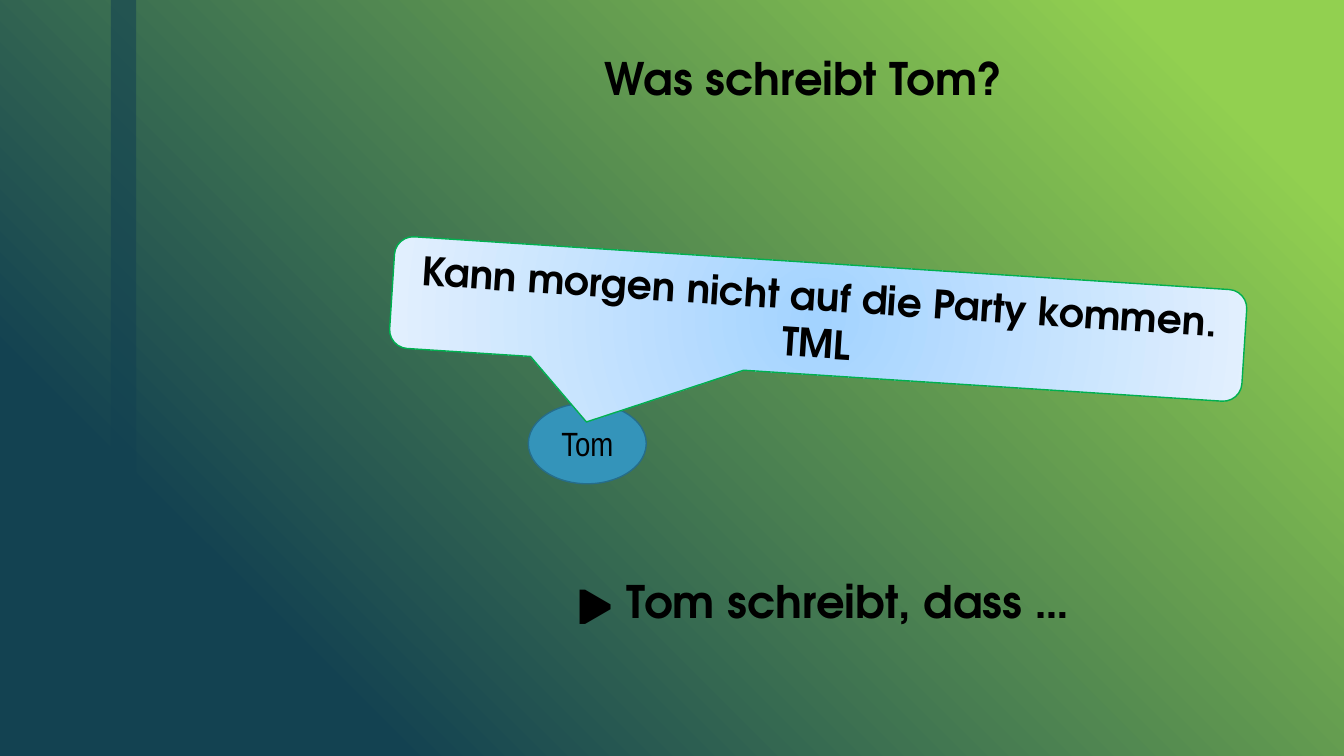
from lxml import etree
from pptx import Presentation
from pptx.dml.color import RGBColor
from pptx.enum import shapes, text
from pptx.oxml import ns
from pptx.util import Inches, Pt


def paint(color, hex_value):
    color.rgb = RGBColor.from_string(hex_value)


def write(frame, words, size, font_name, bold):
    frame.word_wrap = True
    frame.text = words
    paragraph = frame.paragraphs[0]
    paragraph.alignment = text.PP_ALIGN.CENTER
    font = paragraph.runs[0].font
    font.size = Pt(size)
    font.name = font_name
    font.bold = bold
    paint(font.color, "000000")


HEADING_FONT = "TeX Gyre Adventor"

prs = Presentation()
prs.slide_width = Inches(13.33)
prs.slide_height = Inches(7.5)
slide = prs.slides.add_slide(prs.slide_layouts[6])

backdrop = slide.background.fill
backdrop.gradient()
backdrop.gradient_angle = 225
for stop, position, color in zip(backdrop.gradient_stops, (0.1, 0.81), ("92D050", "134251")):
    stop.position = position
    paint(stop.color, color)

stripe = slide.shapes.add_shape(
    shapes.MSO_SHAPE.RECTANGLE, Inches(1.1), 0, Inches(0.25), prs.slide_height)
stripe.shadow.inherit = False
stripe.line.fill.background()
stripe.fill.solid()
paint(stripe.fill.fore_color, "134251")
stripe_color = stripe._element.spPr.find(".//" + ns.qn("a:srgbClr"))
etree.SubElement(stripe_color, ns.qn("a:alpha"), val="60000")

for words, left, top, width in (
    ("Was schreibt Tom?", 5.83, 0.45, 4.28),
    ("▶ Tom schreibt, dass …", 4.17, 5.64, 7.99),
):
    sentence = slide.shapes.add_textbox(Inches(left), Inches(top), Inches(width), Inches(0.64))
    write(sentence.text_frame, words, 32, HEADING_FONT, True)
    sentence.text_frame.auto_size = text.MSO_AUTO_SIZE.SHAPE_TO_FIT_TEXT

tom = slide.shapes.add_shape(
    shapes.MSO_SHAPE.OVAL, Inches(5.24), Inches(4), Inches(1.17), Inches(0.8))
tom.fill.solid()
paint(tom.fill.fore_color, "3494BA")
paint(tom.line.color, "266D8A")
write(tom.text_frame, "Tom", 24, "Arial Narrow", False)

message = slide.shapes.add_shape(
    shapes.MSO_SHAPE.ROUNDED_RECTANGULAR_CALLOUT,
    Inches(3.88), Inches(2.61), Inches(8.47), Inches(1.11))
message.rotation = 3.7
for index, value in enumerate((-0.263, 1.052, 0.167)):
    message.adjustments[index] = value
message.fill.gradient()
for stop, position, color in zip(message.fill.gradient_stops, (0, 1), ("A3D3FF", "E3F0FE")):
    stop.position = position
    paint(stop.color, color)
linear = message._element.spPr.find(".//" + ns.qn("a:lin"))
radial = etree.Element(ns.qn("a:path"), path="circle")
etree.SubElement(radial, ns.qn("a:fillToRect"), l="50000", t="50000", r="50000", b="50000")
linear.getparent().replace(linear, radial)
paint(message.line.color, "00B050")
write(message.text_frame, "Kann morgen nicht auf die Party kommen. TML", 28, HEADING_FONT, True)

for speech_part in (tom, message):
    speech_part.shadow.inherit = False
    speech_part.line.width = Pt(1)
    speech_part.text_frame.vertical_anchor = text.MSO_ANCHOR.MIDDLE

prs.save("out.pptx")
